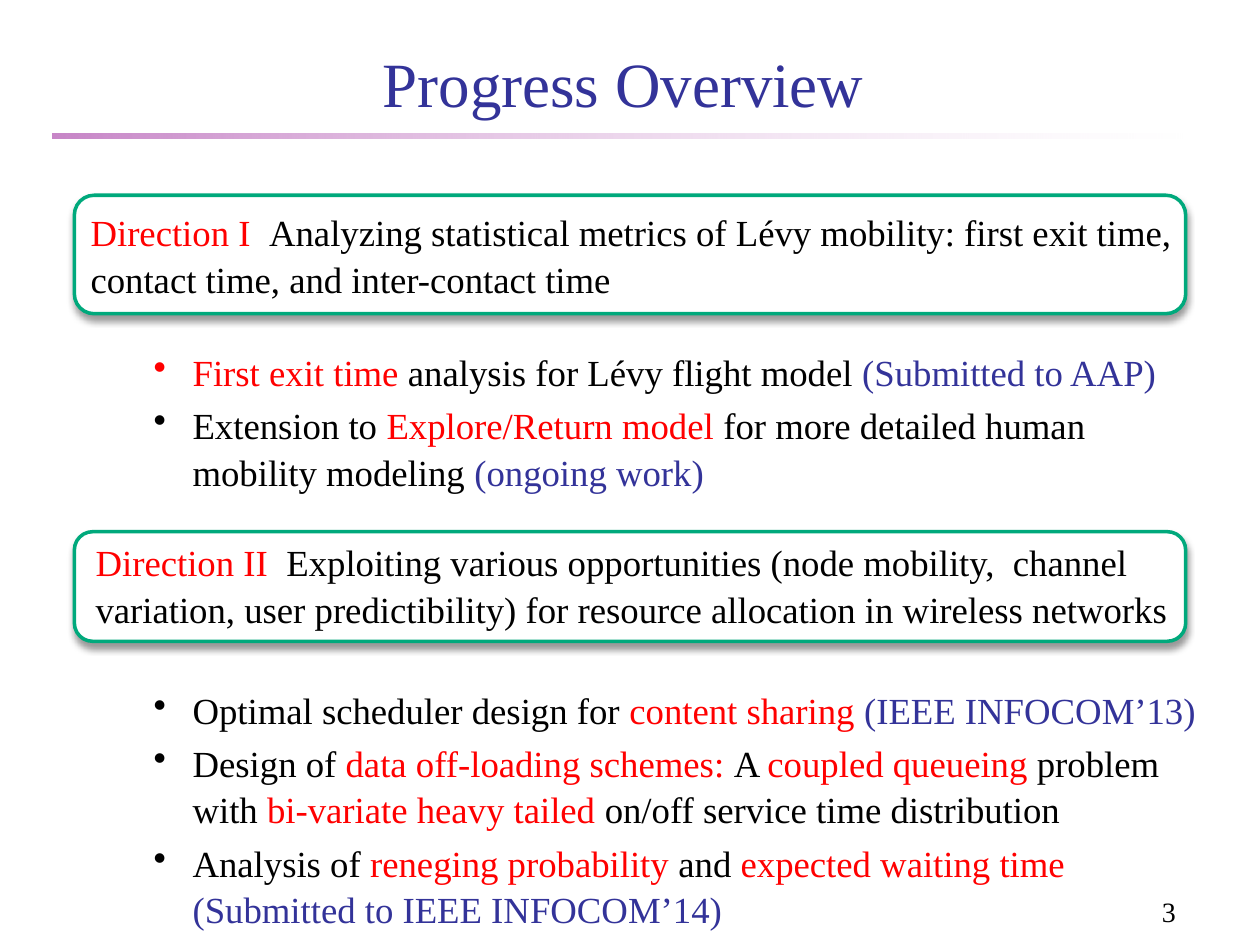
from pptx import Presentation
from pptx.dml.color import RGBColor
from pptx.enum.shapes import MSO_SHAPE
from pptx.enum.text import MSO_ANCHOR, PP_ALIGN
from pptx.oxml import parse_xml
from pptx.oxml.ns import nsdecls, qn
from pptx.util import Inches, Pt
from lxml import etree

BLACK = RGBColor(0x00, 0x00, 0x00)
WHITE = RGBColor(0xFF, 0xFF, 0xFF)
RED = RGBColor(0xFF, 0x00, 0x00)
BLUE = RGBColor(0x33, 0x33, 0x99)
GREEN = RGBColor(0x00, 0xA9, 0x7C)
PLUM = RGBColor(0x8A, 0x00, 0x8A)
PINK = RGBColor(0xD8, 0xA9, 0xD8)

SHADOW = (
    f'<a:effectLst {nsdecls("a")}><a:outerShdw blurRad="50800" dist="38100" '
    'dir="5400000" rotWithShape="0"><a:srgbClr val="000000">'
    '<a:alpha val="40000"/></a:srgbClr></a:outerShdw></a:effectLst>'
)

prs = Presentation()
prs.slide_width, prs.slide_height = Inches(10), Inches(7.5)
slide = prs.slides.add_slide(prs.slide_layouts[6])
shapes = slide.shapes


def add_text(box, paras, size=21, bullet=False, **form):
    """Write paragraphs, each a list of (text, colour) runs."""
    frame = shapes.add_textbox(*map(Inches, box)).text_frame
    frame.word_wrap = True
    frame.vertical_anchor = form.pop("anchor", MSO_ANCHOR.TOP)
    for i, runs in enumerate(paras):
        para = frame.paragraphs[0] if i == 0 else frame.add_paragraph()
        for key, value in form.items():
            setattr(para, key, value)
        if i:
            para.space_before = Pt(4)
        if bullet:
            props = para._p.get_or_add_pPr()
            props.set("marL", str(Inches(0.81)))
            props.set("indent", str(Inches(-0.31)))
            etree.SubElement(props, qn("a:buChar")).set("char", "•")
        for text, color in runs:
            run = para.add_run()
            run.text = text
            run.font.name = "Times New Roman"
            run.font.size = Pt(size)
            run.font.color.rgb = color


# Title and fading rule
add_text((0.42, 0.08, 9.05, 0.92), [[("Progress Overview", BLUE)]], 36,
         alignment=PP_ALIGN.CENTER, anchor=MSO_ANCHOR.BOTTOM)
rule = shapes.add_shape(MSO_SHAPE.RECTANGLE, Inches(0.42), Inches(1.06),
                        Inches(9), Inches(0.04))
rule.shadow.inherit = False
rule.line.fill.background()
rule.fill.gradient()
rule.fill.gradient_angle = 0
for stop, color, pos in zip(rule.fill.gradient_stops, (PLUM, PINK), (0, 1)):
    stop.color.rgb = color
    stop.position = pos
tints = rule._element.spPr.iter(qn("a:srgbClr"))
for tint, alpha in zip(list(tints), (48000, 0)):
    etree.SubElement(tint, qn("a:alpha")).set("val", str(alpha))

# Direction frames with their headings
heads = [
    (1.55, 0.94, (0.62, 1.6, 8.79, 0.85), "Direction I  ",
     "Analyzing statistical metrics of Lévy mobility: first exit time, "
     "contact time, and inter-contact time"),
    (4.22, 0.87, (0.66, 4.22, 8.75, 0.76), "Direction II  ",
     "Exploiting various opportunities (node mobility,  channel variation, "
     "user predictibility) for resource allocation in wireless networks"),
]
for top, height, box, label, text in heads:
    card = shapes.add_shape(MSO_SHAPE.ROUNDED_RECTANGLE, Inches(0.59),
                            Inches(top), Inches(8.82), Inches(height))
    card.fill.solid()
    card.fill.fore_color.rgb = WHITE
    card.line.color.rgb = GREEN
    card.line.width = Pt(2)
    card._element.spPr.append(parse_xml(SHADOW))
    add_text(box, [[(label, RED), (text, BLACK)]], line_spacing=1.05)

# Bullet lists under each direction
lists = [
    ((0.62, 2.71, 8.75, 1.27), [
        [("First exit time ", RED), ("analysis for Lévy flight model ", BLACK),
         ("(Submitted to AAP)", BLUE)],
        [("Extension to ", BLACK), ("Explore/Return model ", RED),
         ("for more detailed human mobility modeling ", BLACK),
         ("(ongoing work)", BLUE)],
    ]),
    ((0.62, 5.39, 9.11, 2), [
        [("Optimal scheduler design for ", BLACK), ("content sharing ", RED),
         ("(IEEE INFOCOM’13)", BLUE)],
        [("Design of ", BLACK), ("data off-loading schemes: ", RED),
         ("A ", BLACK), ("coupled queueing ", RED),
         ("problem with ", BLACK), ("bi-variate heavy tailed ", RED),
         ("on/off service time distribution", BLACK)],
        [("Analysis of ", BLACK), ("reneging probability ", RED),
         ("and ", BLACK), ("expected waiting time ", RED),
         ("(Submitted to IEEE INFOCOM’14)", BLUE)],
    ]),
]
for box, items in lists:
    add_text(box, items, bullet=True, line_spacing=1.05)

# Page number
add_text((8.43, 7.05, 1, 0.37), [[("3", BLACK)]], 16,
         alignment=PP_ALIGN.RIGHT)

prs.save("out.pptx")
